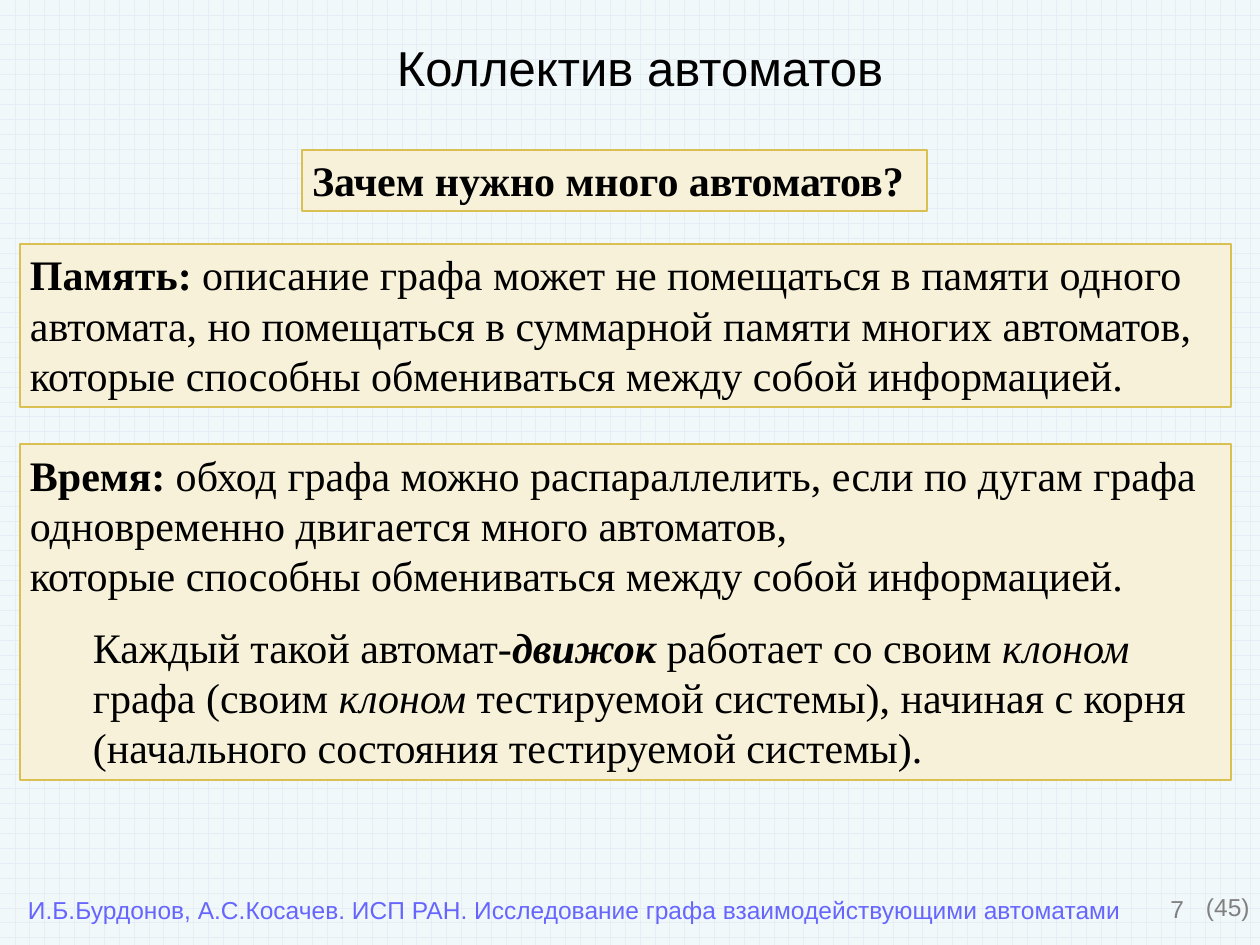
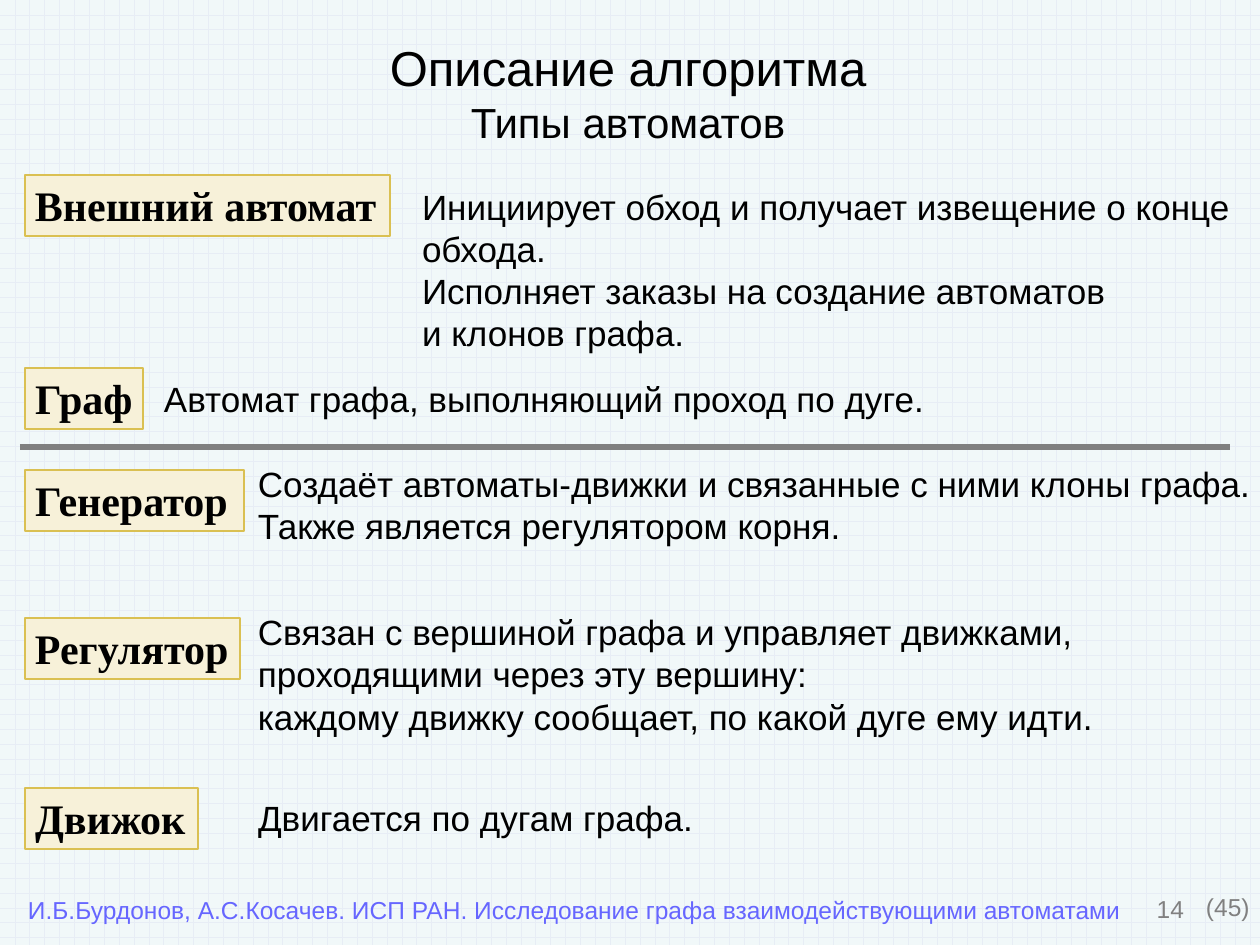
"""Build two slides about automata that explore a graph together."""
from pptx import Presentation
from pptx import util as u
from pptx.dml.color import RGBColor
from pptx.enum import dml, shapes, text
from pptx.oxml.ns import qn
from lxml import etree

BLACK = RGBColor(0x00, 0x00, 0x00)
GRAY = RGBColor(0x80, 0x80, 0x80)
VIOLET = RGBColor(0x66, 0x66, 0xFF)
CREAM = RGBColor(0xF7, 0xF1, 0xD9)
GOLD = RGBColor(0xDA, 0xC0, 0x52)
PAPER = RGBColor(0xF1, 0xF8, 0xF9)
GRID = RGBColor(0xE7, 0xED, 0xF5)

EMU_PER_PX = 914400 / 126
SANS, SERIF = "Arial", "Times New Roman"
BOLD, ITALIC = "b", "i"
LEFT, CENTER, RIGHT = text.PP_ALIGN.LEFT, text.PP_ALIGN.CENTER, text.PP_ALIGN.RIGHT
TOTAL = "(45)"
CREDIT = "И.Б.Бурдонов, А.С.Косачев. ИСП РАН. Исследование графа взаимодействующими автоматами"


def px(length):
    return u.Emu(round(length * EMU_PER_PX))


def write(slide, place, paragraphs, size, font=SANS, color=BLACK, inset=(0, 0),
          align=LEFT, wrap=False, framed=False, middle=False):
    area = [px(length) for length in place]
    if framed:
        box = slide.shapes.add_shape(shapes.MSO_SHAPE.RECTANGLE, *area)
        box.shadow.inherit = False
        box.fill.solid()
        box.fill.fore_color.rgb = CREAM
        box.line.color.rgb = GOLD
        box.line.width = u.Pt(1)
    else:
        box = slide.shapes.add_textbox(*area)
    frame = box.text_frame
    frame.word_wrap = wrap
    frame.auto_size = text.MSO_AUTO_SIZE.SHAPE_TO_FIT_TEXT
    frame.vertical_anchor = text.MSO_ANCHOR.MIDDLE if middle else text.MSO_ANCHOR.TOP
    frame.margin_left = frame.margin_right = px(inset[0])
    frame.margin_top = frame.margin_bottom = px(inset[1])
    for number, content in enumerate(paragraphs):
        paragraph = frame.add_paragraph() if number else frame.paragraphs[0]
        paragraph.alignment = align
        if isinstance(content, str):
            paragraph.text = content
        else:
            for words, style in content:
                run = paragraph.add_run()
                run.text = words
                run.font.bold = BOLD in style
                run.font.italic = ITALIC in style
        for run in paragraph.runs:
            run.font.name = font
            run.font.size = u.Pt(size)
            run.font.color.rgb = color
    return frame


deck = Presentation()
deck.slide_width, deck.slide_height = px(1260), px(945)

pages = []
for page_number in ("7", "14"):
    page = deck.slides.add_slide(deck.slide_layouts[6])
    paper = page.background.fill
    paper.patterned()
    paper.pattern = dml.MSO_PATTERN.HORIZONTAL_BRICK
    paper.fore_color.rgb = GRID
    paper.back_color.rgb = PAPER
    write(page, (903, 888, 294, 66), [page_number], 14, color=GRAY,
          inset=(13, 6), align=RIGHT, wrap=True)
    write(page, (1206, 892, 44, 29), [TOTAL], 14, color=GRAY)
    write(page, (28, 895, 1100, 30), [CREDIT], 14, color=VIOLET)
    pages.append(page)
team, types = pages

write(team, (25, 25, 1230, 84), ["Коллектив автоматов"], 28,
      inset=(13, 13), align=CENTER, wrap=True, middle=True)

exchange = "которые способны обмениваться между собой информацией."
question = [[("Зачем нужно много автоматов?", BOLD)]]
memory = [
    [("Память:", BOLD),
     (" описание графа может не помещаться в памяти одного автомата, "
      "но помещаться в суммарной памяти многих автоматов,", "")],
    exchange,
]
time = [
    [("Время:", BOLD),
     (" обход графа можно распараллелить, если по дугам графа "
      "одновременно двигается много автоматов,", "")],
    exchange,
    [("Каждый такой автомат-", ""), ("движок", BOLD + ITALIC),
     (" работает со своим ", ""), ("клоном", ITALIC),
     (" графа (своим ", ""), ("клоном", ITALIC),
     (" тестируемой системы), начиная с корня "
      "(начального состояния тестируемой системы).", "")],
]
for place, reason in (((302, 150, 625, 61), question),
                      ((20, 244, 1211, 163), memory),
                      ((20, 444, 1211, 336), time)):
    reason_frame = write(team, place, reason, 24, SERIF, inset=(10, 5),
                         wrap=True, framed=True)
engine_note = reason_frame.paragraphs[-1]
engine_note.space_before = u.Pt(12)
engine_note.level = 1
indent = engine_note._p.get_or_add_pPr()
indent.set("marL", str(px(63)))
indent.set("indent", "0")

heading = write(types, (25, 25, 1206, 135), ["Описание алгоритма\vТипы автоматов"], 28,
                inset=(13, 13), align=CENTER, wrap=True, middle=True)
heading.paragraphs[0].runs[1].font.size = u.Pt(24)

automata = [
    ("Внешний автомат", (175, 365), (417, 180, 823, 180),
     ["Инициирует обход и получает извещение о конце\vобхода.",
      "Исполняет заказы на создание автоматов\vи клонов графа."]),
    ("Граф", (368, 118), (159, 373, 775, 52),
     ["Автомат графа, выполняющий проход по дуге."]),
    ("Генератор", (470, 219), (253, 457, 1009, 94),
     ["Создаёт автоматы-движки и связанные с ними клоны графа.",
      "Также является регулятором корня."]),
    ("Регулятор", (618, 215), (253, 606, 885, 137),
     ["Связан с вершиной графа и управляет движками,\vпроходящими через эту вершину:",
      "каждому движку сообщает, по какой дуге ему идти."]),
    ("Движок", (788, 173), (253, 791, 449, 53),
     ["Двигается по дугам графа."]),
]
for name, (top, width), role_place, role in automata:
    write(types, (25, top, width, 61), [[(name, BOLD)]], 24, SERIF,
          inset=(10, 5), framed=True)
    write(types, role_place, role, 20, inset=(5, 5))

divider = types.shapes.add_connector(shapes.MSO_CONNECTOR.STRAIGHT,
                                     px(20), px(447), px(1230), px(447))
divider.line.color.rgb = GRAY
divider.line.width = u.Pt(3.75)
etree.SubElement(divider._element.spPr, qn("a:effectLst"))

deck.save("out.pptx")
